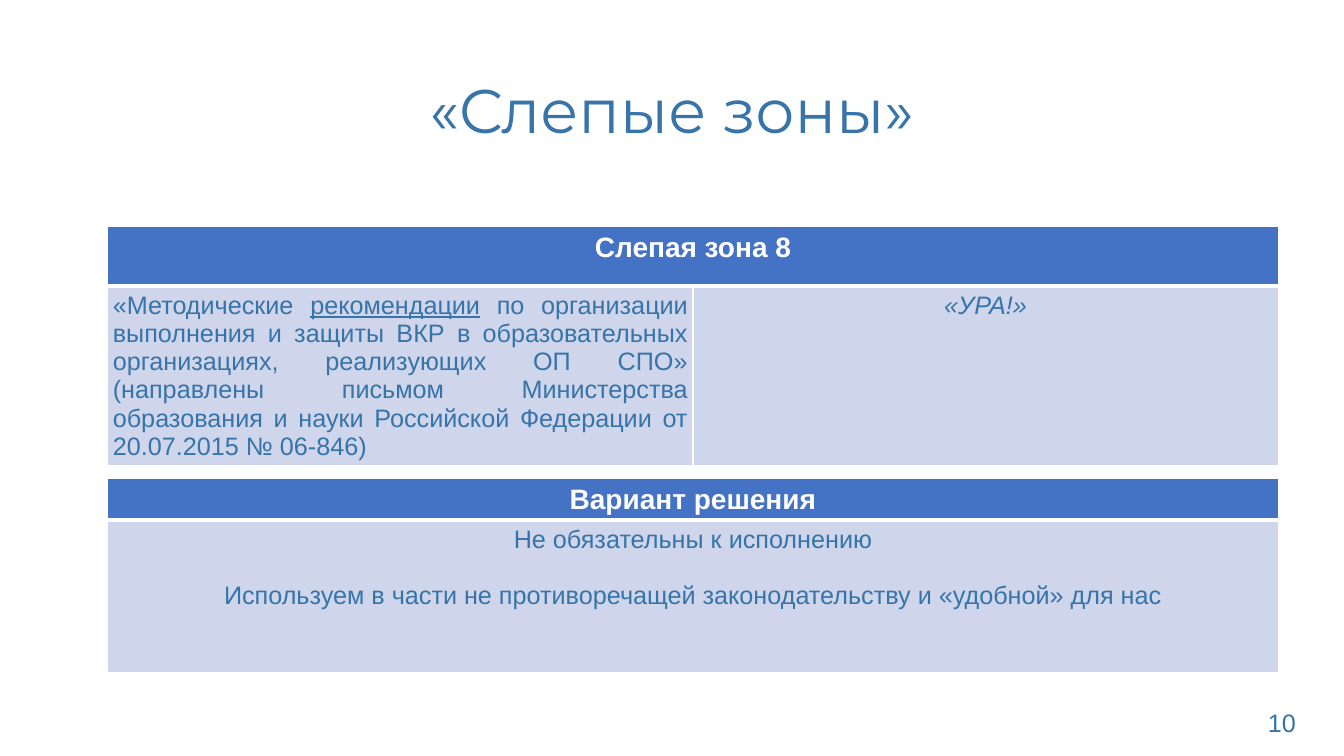
from lxml.etree import SubElement
from pptx import Presentation
from pptx.dml.color import RGBColor
from pptx.enum.text import MSO_ANCHOR, PP_ALIGN
from pptx.oxml.ns import qn
from pptx.util import Pt

BLUE, HEAD, PALE, WHITE = "3774A9", "4472C4", "CFD5EA", "FFFFFF"


def color(code):
    return RGBColor.from_string(code)


def style(para, size, code=BLUE, face="Arial", align=PP_ALIGN.CENTER, bold=False):
    para.alignment = align
    font = para.font
    font.name, font.size, font.bold = face, Pt(size), bold
    font.color.rgb = color(code)


def place(shape, left, top, width, height):
    shape.left, shape.top = Pt(left), Pt(top)
    shape.width, shape.height = Pt(width), Pt(height)


def add_title(slide, text):
    title = slide.shapes.title
    place(title, 66, 29, 828, 104.5)
    frame = title.text_frame
    frame.text = text
    frame.vertical_anchor = MSO_ANCHOR.MIDDLE
    para = frame.paragraphs[0]
    para.line_spacing = 0.9
    style(para, 44, face="Montserrat")


def add_number(slide, text):
    box = slide.shapes.add_textbox(Pt(898.5), Pt(502), Pt(50), Pt(29))
    box.text_frame.word_wrap = True
    box.text_frame.text = text
    style(box.text_frame.paragraphs[0], 18, align=PP_ALIGN.LEFT)


def edge(cell, side, width):
    line = SubElement(cell._tc.get_or_add_tcPr(), qn("a:ln" + side), w=str(Pt(width)))
    fill = SubElement(line, qn("a:solidFill"))
    SubElement(fill, qn("a:srgbClr"), val=WHITE)


def add_grid(slide, top, rows, cols, inset):
    """Add a table with a dark first row, pale other rows and white borders."""
    shape = slide.shapes.add_table(
        len(rows), cols, Pt(77), Pt(top), Pt(836), Pt(sum(rows)))
    table = shape.table
    for row, height in zip(table.rows, rows):
        row.height = Pt(height)
    for i, row in enumerate(table.rows):
        for cell in row.cells:
            for side in "LRTB":
                thick = side == ("T" if i else "B")
                edge(cell, side, 3 if thick else 1)
            cell.fill.solid()
            cell.fill.fore_color.rgb = color(PALE if i else HEAD)
            cell.margin_left = cell.margin_right = Pt(inset)
            cell.margin_top = cell.margin_bottom = Pt(3.6)
    if cols > 1:
        table.cell(0, 0).merge(table.cell(0, cols - 1))
    return table


def write(cell, text, **look):
    cell.text = text
    for para in cell.text_frame.paragraphs:
        style(para, **look)
    return cell.text_frame.paragraphs


def add_zone(slide):
    table = add_grid(slide, 162, [42.5, 105], 2, 3.6)
    write(table.cell(0, 0), "Слепая зона 8", size=20, code=WHITE, bold=True)
    para = table.cell(1, 0).text_frame.paragraphs[0]
    style(para, 18, align=PP_ALIGN.JUSTIFY)
    para.add_run().text = "«Методические "
    link = para.add_run()
    link.text = "рекомендации"
    link.font.underline = True
    para.add_run().text = (
        " по организации выполнения и защиты ВКР в образовательных "
        "организациях, реализующих ОП СПО» (направлены письмом Министерства "
        "образования и науки Российской Федерации от 20.07.2015 № 06-846)")
    cheer = write(table.cell(1, 1), "«УРА!»", size=18)
    cheer[0].font.italic = True


def add_answer(slide):
    table = add_grid(slide, 342, [25, 109], 1, 7.2)
    write(table.cell(0, 0), "Вариант решения", size=20, code=WHITE, bold=True)
    lines = write(
        table.cell(1, 0),
        "Не обязательны к исполнению\n"
        "Используем в части не противоречащей законодательству и «удобной» для нас",
        size=18)
    lines[0].space_after = Pt(20)


def main():
    deck = Presentation()
    deck.slide_width, deck.slide_height = Pt(960), Pt(540)
    slide = deck.slides.add_slide(deck.slide_layouts[5])
    add_title(slide, "«Слепые зоны»")
    add_zone(slide)
    add_answer(slide)
    add_number(slide, "10")
    deck.save("out.pptx")


if __name__ == "__main__":
    main()
